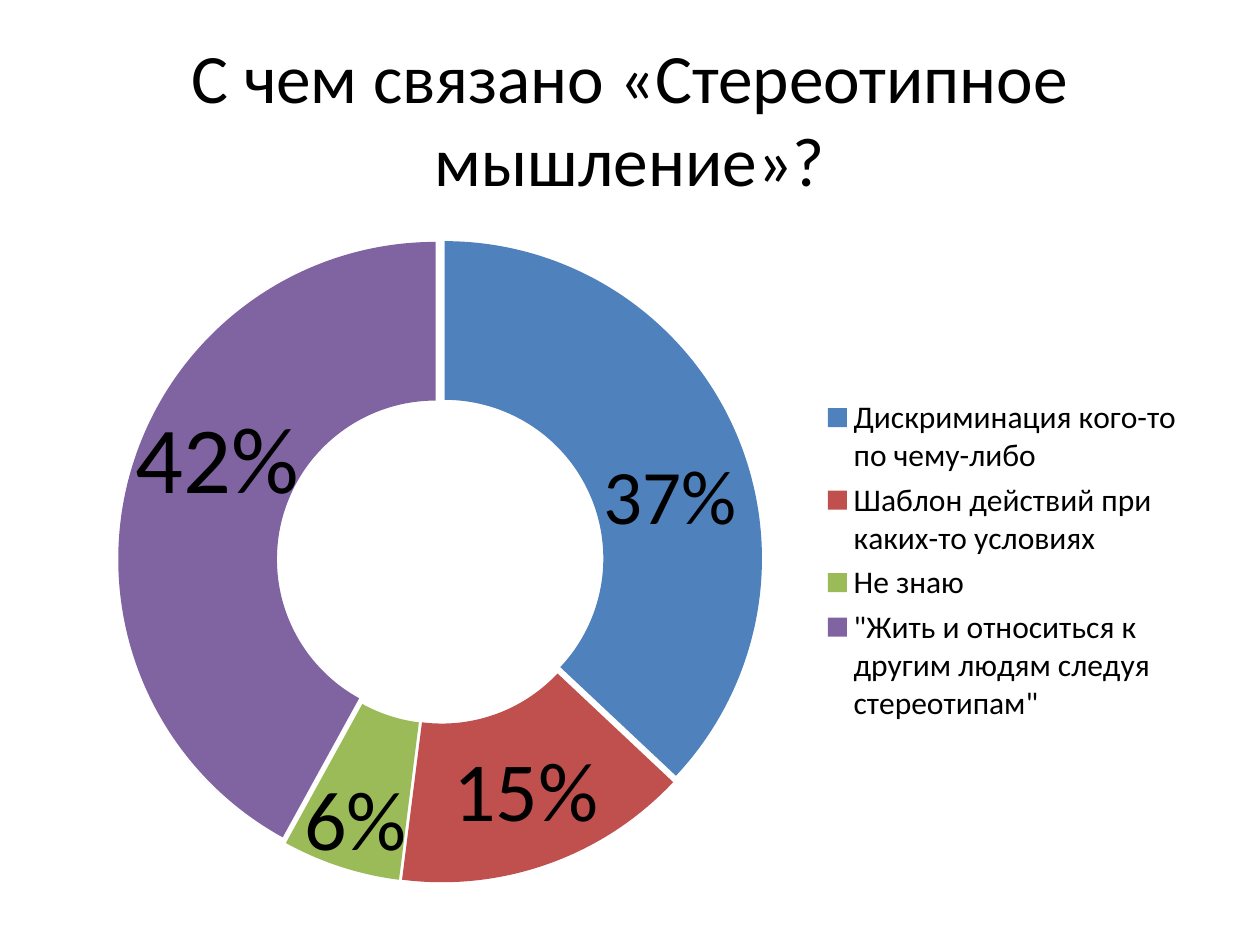
from dataclasses import dataclass

from lxml.etree import SubElement
from pptx import Presentation
from pptx.chart.data import CategoryChartData
from pptx.dml.color import RGBColor
from pptx.enum.chart import XL_CHART_TYPE as ChartType, XL_LEGEND_POSITION as LegendPosition
from pptx.enum.text import MSO_ANCHOR as Anchor, PP_ALIGN as Align
from pptx.oxml.ns import qn
from pptx.util import Emu, Inches, Pt

PX_PER_INCH = 126


def px(length):
    return Emu(round(length * Inches(1) / PX_PER_INCH))


@dataclass(frozen=True)
class Theme:
    font: str = "Calibri"
    ink: str = "000000"
    slices: tuple = ("4F81BD", "C0504D", "9BBB59", "8064A2")
    title_size: float = 39.6
    legend_size: int = 18
    explosion: int = 3


class SlideBuilder:
    def __init__(self, slide, theme):
        self.slide = slide
        self.theme = theme

    def style(self, font, size):
        font.name = self.theme.font
        font.size = Pt(size)
        font.color.rgb = RGBColor.from_string(self.theme.ink)

    def text(self, box, wording, size, align=Align.LEFT, anchor=Anchor.TOP, wrap=False):
        frame = self.slide.shapes.add_textbox(*map(px, box)).text_frame
        frame.text = wording
        frame.word_wrap = wrap
        frame.vertical_anchor = anchor
        paragraph = frame.paragraphs[0]
        paragraph.alignment = align
        self.style(paragraph.runs[0].font, size)

    def doughnut(self, box, series_name, answers):
        data = CategoryChartData()
        data.categories = list(answers)
        data.add_series(series_name, list(answers.values()))
        chart = self.slide.shapes.add_chart(ChartType.DOUGHNUT, *map(px, box), data).chart
        self.style(chart.font, self.theme.legend_size)
        chart.has_title = False
        chart.has_legend = True
        chart.legend.position = LegendPosition.RIGHT
        chart.legend.include_in_layout = False

        plot = chart.plots[0]
        plot.vary_by_categories = True
        series = plot.series[0]
        explosion = SubElement(series._element, qn("c:explosion"))
        explosion.set("val", str(self.theme.explosion))
        series._element.find(qn("c:tx")).addnext(explosion)
        for index, color in enumerate(self.theme.slices):
            fill = series.points[index].format.fill
            fill.solid()
            fill.fore_color.rgb = RGBColor.from_string(color)


def main():
    deck = Presentation()
    deck.slide_width, deck.slide_height = Inches(10), Inches(7.5)
    theme = Theme()
    survey = SlideBuilder(deck.slides.add_slide(deck.slide_layouts[6]), theme)

    survey.text((63, 38, 1134, 158), "С чем связано «Стереотипное мышление»?",
                theme.title_size, Align.CENTER, Anchor.MIDDLE, wrap=True)

    answers = {
        "Дискриминация кого-то по чему-либо": 37,
        "Шаблон действий при каких-то условиях": 15,
        "Не знаю": 6,
        '"Жить и относиться к другим людям следуя стереотипам"': 42,
    }
    survey.doughnut((63, 221, 1134, 679), "Series 1", answers)

    shares = [
        ("42%", (123, 393, 203, 127), 54),
        ("37%", (591, 441, 160, 106), 44),
        ("6%", (292, 760, 130, 115), 48),
        ("15%", (441, 731, 173, 115), 48),
    ]
    for share, box, size in shares:
        survey.text(box, share, size)

    deck.save("out.pptx")


if __name__ == "__main__":
    main()
